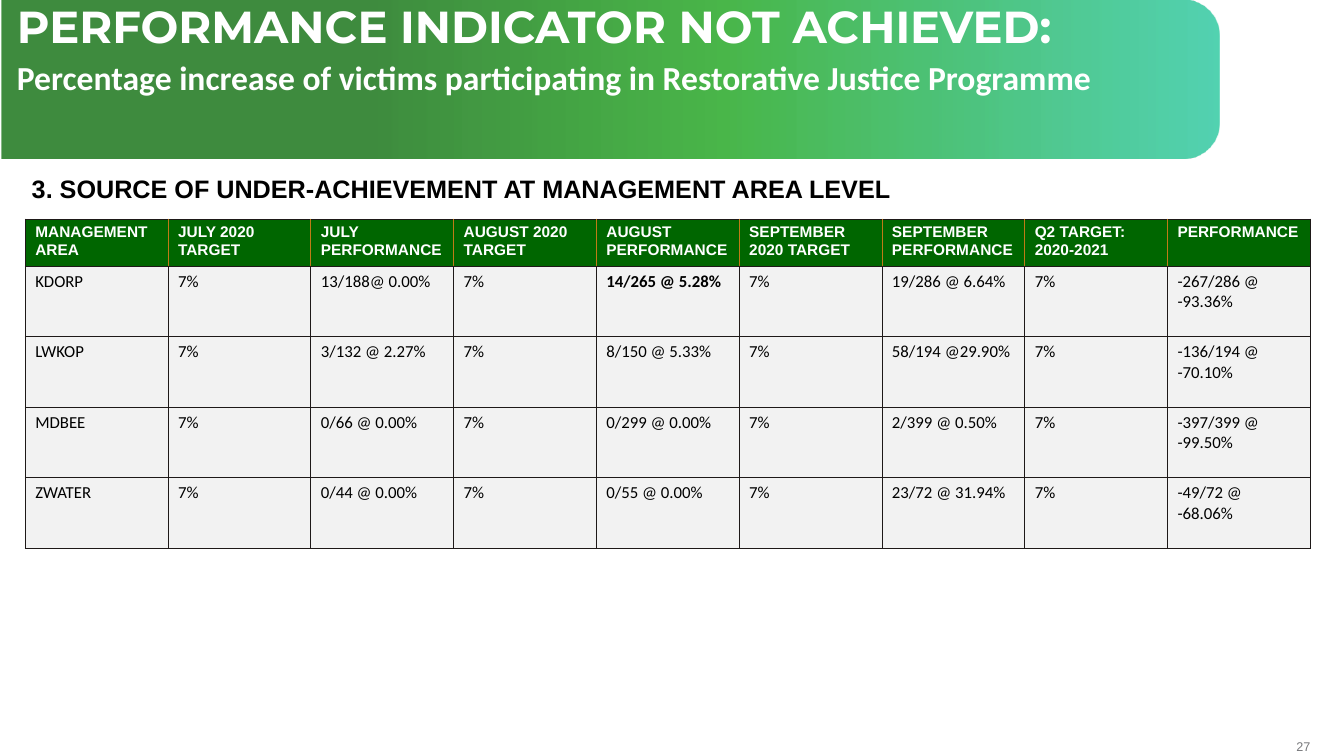
from dataclasses import dataclass

from lxml import etree
from pptx import Presentation
from pptx.dml.color import RGBColor
from pptx.enum.shapes import MSO_SHAPE
from pptx.enum.text import MSO_ANCHOR, PP_ALIGN
from pptx.oxml.ns import qn
from pptx.slide import Slide
from pptx.table import _Cell
from pptx.text.text import TextFrame
from pptx.util import Pt

BANNER_SHAPE = MSO_SHAPE.ROUND_2_SAME_RECTANGLE
LEFT, RIGHT = PP_ALIGN.LEFT, PP_ALIGN.RIGHT
TOP, MIDDLE = MSO_ANCHOR.TOP, MSO_ANCHOR.MIDDLE

COLORS = {
    "white": "FFFFFF",
    "black": "000000",
    "page_number": "77787B",
    "header": "006600",
    "body": "F2F2F2",
    "border": "1E1918",
    "header_divider": "BF7B17",
    "banner_dark": "006600",
    "banner_green": "009900",
    "banner_teal": "00BC8D",
}


@dataclass(frozen=True)
class GradientStop:
    position: int
    color: str
    opacity: int


@dataclass(frozen=True)
class ManagementArea:
    name: str
    july: str
    august: str
    september: str
    quarter: str


BANNER_STOPS = [
    GradientStop(30, "banner_dark", 75),
    GradientStop(59, "banner_green", 71),
    GradientStop(100, "banner_teal", 67),
]
# A vertical tab is a line break, a newline starts a paragraph
HEADINGS = [
    "MANAGEMENT AREA", "JULY 2020\vTARGET", "JULY PERFORMANCE",
    "AUGUST 2020\vTARGET", "AUGUST PERFORMANCE", "SEPTEMBER 2020 TARGET",
    "SEPTEMBER PERFORMANCE", "Q2 TARGET: 2020-2021", "PERFORMANCE",
]
TARGET = "7%"
AREAS = [
    ManagementArea("KDORP", "13/188@ 0.00%", "14/265 @ 5.28%",
                   "19/286 @ 6.64%", "-267/286 @\n-93.36%"),
    ManagementArea("LWKOP", "3/132 @ 2.27%", "8/150 @ 5.33%",
                   "58/194 @29.90%", "-136/194 @\n-70.10%"),
    ManagementArea("MDBEE", "0/66 @ 0.00%", "0/299 @ 0.00%",
                   "2/399 @ 0.50%", "-397/399 @\n-99.50%"),
    ManagementArea("ZWATER", "0/44 @ 0.00%", "0/55 @ 0.00%",
                   "23/72 @ 31.94%", "-49/72 @\n-68.06%"),
]
HIGHLIGHT = "14/265 @ 5.28%"
COLUMN_WIDTH, HEADER_HEIGHT, AREA_HEIGHT = 102, 33.6, 50.4


def write(frame: TextFrame, text: str, *, size: float, font: str, color: str,
          bold: bool = False, align: PP_ALIGN = LEFT,
          line_spacing: float | None = None, space_after: float = 0) -> None:
    """Add formatted paragraphs, filling the empty first one if there is one."""
    for line in text.split("\n"):
        first = frame.paragraphs[0]
        paragraph = frame.add_paragraph() if first.runs else first
        paragraph.text = line
        paragraph.alignment = align
        paragraph.line_spacing = line_spacing
        paragraph.space_after = Pt(space_after)
        for run in paragraph.runs:
            run.font.size = Pt(size)
            run.font.name = font
            run.font.bold = bold
            run.font.color.rgb = RGBColor.from_string(COLORS[color])


def add_frame(slide: Slide, left: float, top: float, width: float, height: float,
              anchor: MSO_ANCHOR = TOP) -> TextFrame:
    frame = slide.shapes.add_textbox(Pt(left), Pt(top), Pt(width), Pt(height)).text_frame
    frame.word_wrap = True
    frame.vertical_anchor = anchor
    return frame


def add_banner(slide: Slide, left: float, top: float, width: float, height: float) -> None:
    """Draw a banner rounded on the right, as a shape turned by 90 degrees."""
    banner = slide.shapes.add_shape(
        BANNER_SHAPE, Pt(left + (width - height) / 2), Pt(top + (height - width) / 2),
        Pt(height), Pt(width))
    banner.rotation = 90
    banner.adjustments[0] = 0.233
    banner.adjustments[1] = 0
    banner.shadow.inherit = False
    banner.line.fill.background()
    banner.fill.gradient()
    banner.fill.gradient_angle = 90
    stops = next(banner._element.spPr.iter(qn("a:gsLst")))
    for default_stop in list(stops):
        stops.remove(default_stop)
    for stop in BANNER_STOPS:
        entry = etree.SubElement(stops, qn("a:gs"), pos=str(stop.position * 1000))
        color = etree.SubElement(entry, qn("a:srgbClr"), val=COLORS[stop.color])
        etree.SubElement(color, qn("a:alpha"), val=str(stop.opacity * 1000))


def style_cell(cell: _Cell, fill: str, left: str, right: str) -> None:
    properties = cell._tc.get_or_add_tcPr()
    sides = {"lnL": left, "lnR": right, "lnT": "border", "lnB": "border"}
    for side, color in sides.items():
        line = etree.SubElement(properties, qn(f"a:{side}"), w=str(Pt(0.5)))
        solid = etree.SubElement(line, qn("a:solidFill"))
        etree.SubElement(solid, qn("a:srgbClr"), val=COLORS[color])
    cell.fill.solid()
    cell.fill.fore_color.rgb = RGBColor.from_string(COLORS[fill])


def add_results(slide: Slide, left: float, top: float) -> None:
    rows = [HEADINGS] + [
        [area.name, TARGET, area.july, TARGET, area.august, TARGET,
         area.september, TARGET, area.quarter] for area in AREAS]
    last = len(HEADINGS) - 1
    results = slide.shapes.add_table(
        len(rows), len(HEADINGS), Pt(left), Pt(top), Pt(COLUMN_WIDTH * len(HEADINGS)),
        Pt(HEADER_HEIGHT + AREA_HEIGHT * len(AREAS))).table
    for column in results.columns:
        column.width = Pt(COLUMN_WIDTH)
    for r, values in enumerate(rows):
        is_header = r == 0
        results.rows[r].height = Pt(HEADER_HEIGHT if is_header else AREA_HEIGHT)
        divider = "header_divider" if is_header else "border"
        for c, value in enumerate(values):
            cell = results.cell(r, c)
            style_cell(cell, "header" if is_header else "body",
                       "border" if c == 0 else divider,
                       "border" if c == last else divider)
            if is_header:
                write(cell.text_frame, value, size=11, font="Arial", color="white", bold=True)
            else:
                write(cell.text_frame, value, size=12, font="Calibri", color="black",
                      bold=value == HIGHLIGHT)


def main() -> None:
    presentation = Presentation()
    presentation.slide_width, presentation.slide_height = Pt(960), Pt(540)
    slide = presentation.slides.add_slide(presentation.slide_layouts[6])

    # Page number
    page_number = add_frame(slide, 908, 527.8, 28, 10.8, MIDDLE)
    page_number.margin_left = page_number.margin_right = 0
    page_number.margin_top = page_number.margin_bottom = 0
    write(page_number, "27", size=9, font="Arial", color="page_number", align=RIGHT)

    # Banner and title
    add_banner(slide, 1, 0, 870, 113.4)
    title = add_frame(slide, 5, 0, 862.6, 41)
    write(title, "PERFORMANCE INDICATOR NOT ACHIEVED:", size=32, font="Montserrat",
          color="white", bold=True, line_spacing=0.9, space_after=6)
    write(title, "Percentage increase of victims participating in Restorative Justice Programme",
          size=24, font="Calibri", color="white", bold=True, line_spacing=0.9)

    # Section heading and results table
    section = add_frame(slide, 15.6, 120.2, 696, 29)
    write(section, "3. SOURCE OF UNDER-ACHIEVEMENT AT MANAGEMENT AREA LEVEL",
          size=18, font="Arial", color="black", bold=True)
    add_results(slide, 18, 156.4)

    presentation.save("out.pptx")


if __name__ == "__main__":
    main()
